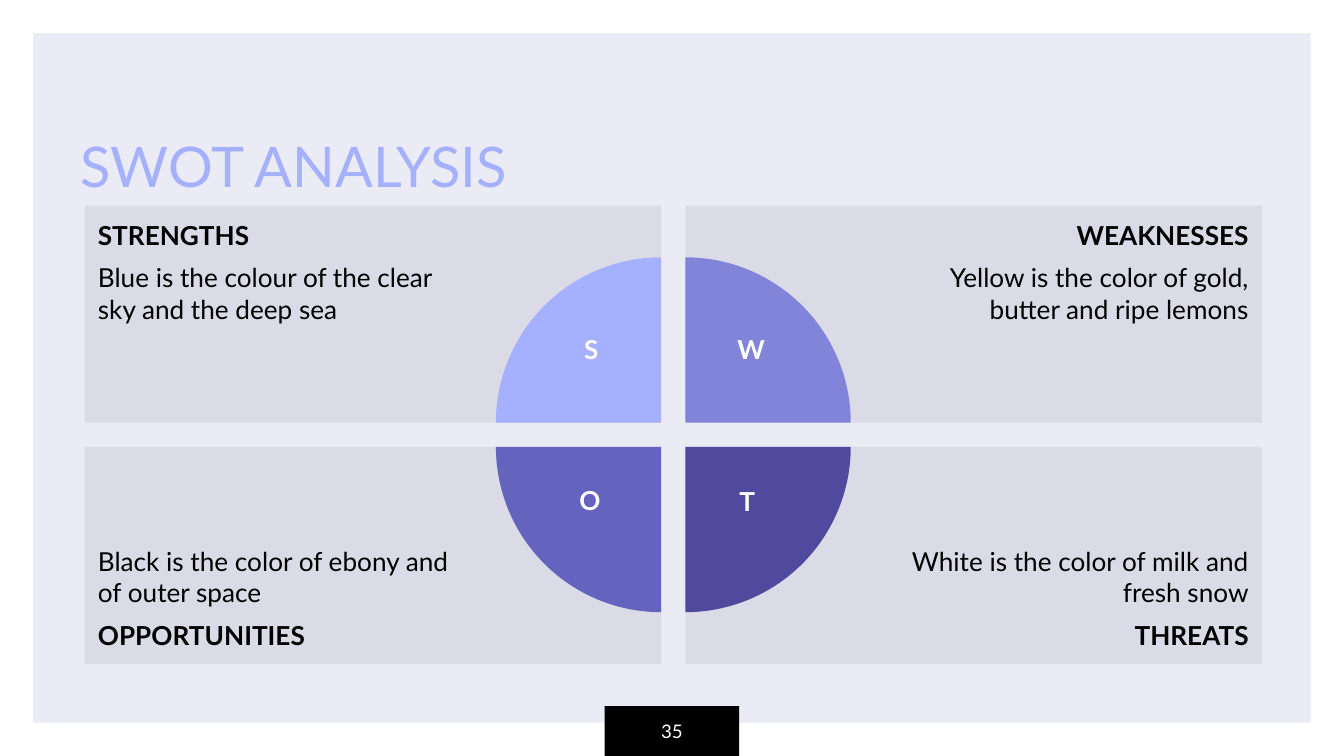
from collections import namedtuple

from pptx import Presentation
from pptx.dml.color import RGBColor
from pptx.enum.shapes import MSO_SHAPE as Shape
from pptx.enum.text import MSO_ANCHOR as Anchor, PP_ALIGN as Align
from pptx.util import Inches, Pt

WHITE = RGBColor(0xFF, 0xFF, 0xFF)
BLACK = RGBColor(0x00, 0x00, 0x00)
BACKGROUND = RGBColor(0xEA, 0xEB, 0xF4)
PANEL = RGBColor(0xDA, 0xDB, 0xE6)
STRENGTH = RGBColor(0xA5, 0xB0, 0xFE)
WEAKNESS = RGBColor(0x81, 0x84, 0xD9)
OPPORTUNITY = RGBColor(0x64, 0x63, 0xBD)
THREAT = RGBColor(0x4F, 0x4A, 0x9E)

Box = namedtuple("Box", "left top width height")
Quadrant = namedtuple("Quadrant", "column row letter heading body color rotation letter_x letter_y")

# letter_x and letter_y: letter box offsets from the inner corner of the panel
QUADRANTS = [
    Quadrant(0, 0, "S", "STRENGTHS", "Blue is the colour of the clear sky and the deep sea",
             STRENGTH, 0, -0.52, -0.71),
    Quadrant(1, 0, "W", "WEAKNESSES", "Yellow is the color of gold, butter and ripe lemons",
             WEAKNESS, 90, 0.49, -0.71),
    Quadrant(0, 1, "O", "OPPORTUNITIES", "Black is the color of ebony and of outer space",
             OPPORTUNITY, 270, -0.53, 0.23),
    Quadrant(1, 1, "T", "THREATS", "White is the color of milk and fresh snow",
             THREAT, 180, 0.46, 0.24),
]
SLIDE_WIDTH = 10
SLIDE_HEIGHT = SLIDE_WIDTH * 9 / 16
PANEL_GAP = 0.18
PIE_RADIUS = 1.23
LETTER_SIZE = 0.46
TEXT_GAP = Pt(6)


def inches(box):
    return [Inches(value) for value in box]


def add_filled(slide, kind, box, color):
    shape = slide.shapes.add_shape(kind, *inches(box))
    shape.shadow.inherit = False
    shape.fill.solid()
    shape.fill.fore_color.rgb = color
    shape.line.fill.background()
    return shape


def format_frame(shape, **formats):
    values = dict(word_wrap=True, vertical_anchor=Anchor.TOP)
    values.update(formats)
    for name, value in values.items():
        setattr(shape.text_frame, name, value)
    return shape.text_frame


def write(paragraph, text, size, color, bold=False, **formats):
    for name, value in formats.items():
        setattr(paragraph, name, value)
    run = paragraph.add_run()
    run.text = text
    for name, value in dict(name="Lato", size=Pt(size), bold=bold).items():
        setattr(run.font, name, value)
    run.font.color.rgb = color


def add_border(slide, box):
    border = add_filled(slide, Shape.FRAME, box, WHITE)
    border.adjustments[0] = 0.044


def add_page_number(slide, box):
    tab = add_filled(slide, Shape.RECTANGLE, box, BLACK)
    frame = format_frame(tab, vertical_anchor=Anchor.MIDDLE)
    write(frame.paragraphs[0], "35", 10, WHITE, alignment=Align.CENTER)


def add_title(slide, box):
    title = slide.shapes.add_textbox(*inches(box))
    frame = format_frame(title, vertical_anchor=Anchor.BOTTOM, margin_bottom=Inches(0.1))
    write(frame.paragraphs[0], "SWOT ANALYSIS", 30, STRENGTH)


def add_panel(slide, box, quadrant):
    panel = add_filled(slide, Shape.RECTANGLE, box, PANEL)
    right, bottom = quadrant.column == 1, quadrant.row == 1
    frame = format_frame(
        panel,
        vertical_anchor=Anchor.BOTTOM if bottom else Anchor.TOP,
        margin_left=Inches(1.5 if right else 0.1),
        margin_right=Inches(0.1 if right else 1.5),
        margin_top=Inches(0.1),
        margin_bottom=Inches(0.1),
    )
    # Headings sit on the outer edge: above the text on top, below it at the bottom
    lines = [(quadrant.heading, True), (quadrant.body, False)]
    if bottom:
        lines.reverse()
    first, second = frame.paragraphs[0], frame.add_paragraph()
    align = Align.RIGHT if right else Align.LEFT
    write(first, lines[0][0], 14, BLACK, lines[0][1], alignment=align)
    write(second, lines[1][0], 14, BLACK, lines[1][1], alignment=align,
          space_before=TEXT_GAP, space_after=TEXT_GAP)


def add_sector(slide, corner_x, corner_y, quadrant):
    # Quarter pie centred on the inner corner of its panel
    pie_box = Box(corner_x - PIE_RADIUS, corner_y - PIE_RADIUS, 2 * PIE_RADIUS, 2 * PIE_RADIUS)
    pie = add_filled(slide, Shape.PIE, pie_box, quadrant.color)
    pie.adjustments[0] = 108  # 180 degrees
    pie.adjustments[1] = 162  # 270 degrees
    pie.rotation = quadrant.rotation

    # Letter
    letter_box = Box(corner_x + quadrant.letter_x - LETTER_SIZE / 2,
                     corner_y + quadrant.letter_y, LETTER_SIZE, LETTER_SIZE)
    letter = slide.shapes.add_textbox(*inches(letter_box))
    frame = format_frame(letter, word_wrap=False)
    write(frame.paragraphs[0], quadrant.letter, 14, WHITE, True, alignment=Align.CENTER)


def add_swot(slide, box):
    width = (box.width - PANEL_GAP) / 2
    height = (box.height - PANEL_GAP) / 2
    for quadrant in QUADRANTS:
        left = box.left + quadrant.column * (width + PANEL_GAP)
        top = box.top + quadrant.row * (height + PANEL_GAP)
        add_panel(slide, Box(left, top, width, height), quadrant)
    # Sectors go over all panels
    for quadrant in QUADRANTS:
        corner_x = box.left + width + quadrant.column * PANEL_GAP
        corner_y = box.top + height + quadrant.row * PANEL_GAP
        add_sector(slide, corner_x, corner_y, quadrant)


def main():
    presentation = Presentation()
    presentation.slide_width = Inches(SLIDE_WIDTH)
    presentation.slide_height = Inches(SLIDE_HEIGHT)
    slide = presentation.slides.add_slide(presentation.slide_layouts[6])
    slide.background.fill.solid()
    slide.background.fill.fore_color.rgb = BACKGROUND

    add_border(slide, Box(0, 0, SLIDE_WIDTH, SLIDE_HEIGHT))
    add_page_number(slide, Box(4.5, SLIDE_HEIGHT - 0.37, 1, 0.37))
    add_title(slide, Box(0.5, 0.64, 5.62, 0.94))
    add_swot(slide, Box(0.63, 1.53, 8.76, 3.41))
    presentation.save("out.pptx")


if __name__ == "__main__":
    main()
